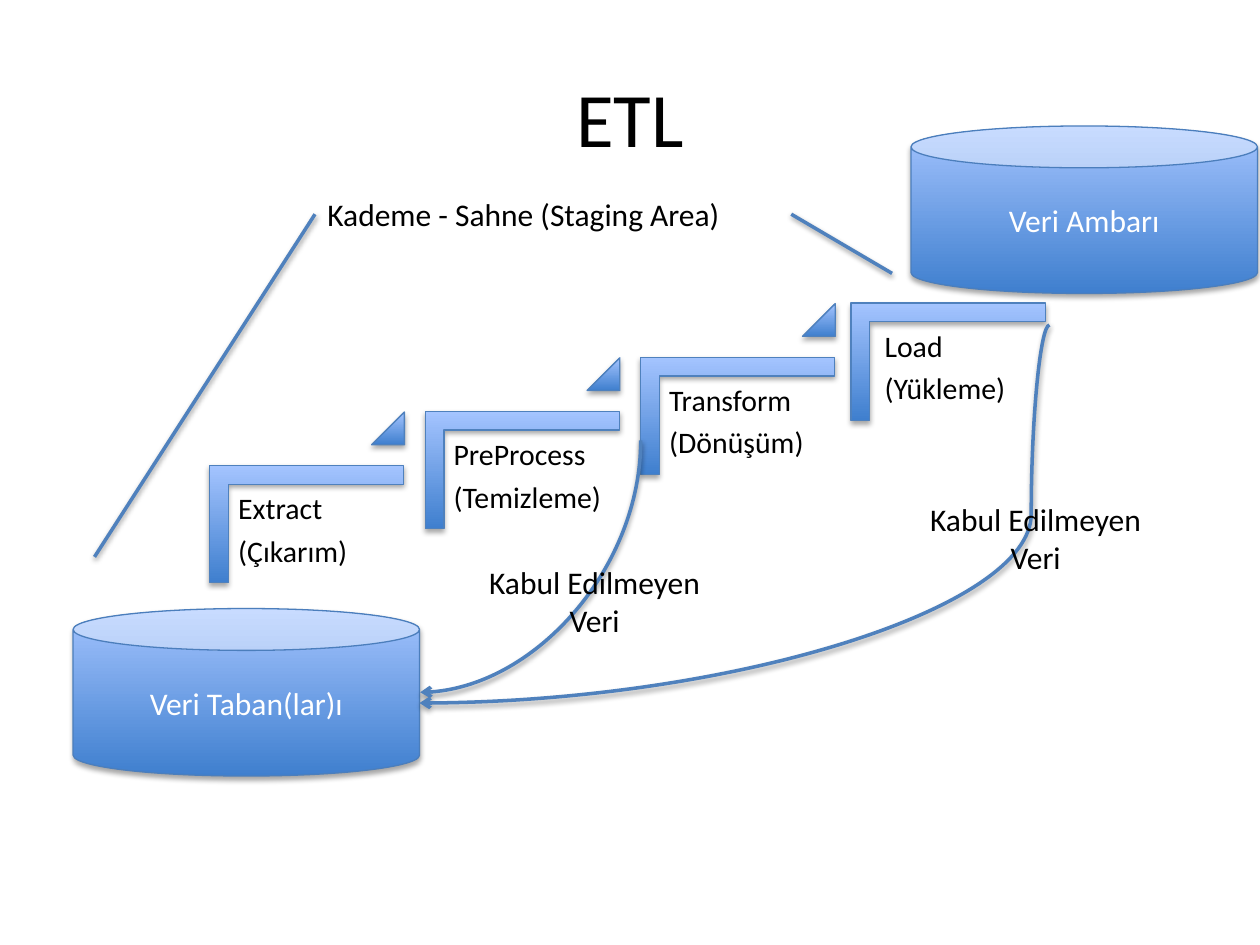
from lxml import etree
from pptx import Presentation
from pptx.dml.color import RGBColor
from pptx.enum.shapes import MSO_CONNECTOR as CONN, MSO_SHAPE as SHAPE
from pptx.enum.text import MSO_ANCHOR as ANCHOR, MSO_AUTO_SIZE as AUTO, PP_ALIGN as ALIGN
from pptx.oxml.ns import qn
from pptx.util import Inches, Pt

FONT = "Calibri"
COLORS = {"text": "000000", "light_text": "FFFFFF", "dark": "3F7FCE", "light": "A4C4FF",
          "line": "4F81BD", "can_line": "4B7EBC"}

TITLE = "ETL"
STEPS = [("Extract\n(Çıkarım)", 1.97), ("PreProcess\n(Temizleme)", 3.68),
         ("Transform\n(Dönüşüm)", 5.39), ("Load\n(Yükleme)", 7.06)]
STORES = [("Veri Taban(lar)ı", 0.58, 4.83), ("Veri Ambarı", 7.23, 1)]
REJECTS = ("Kabul Edilmeyen\nVeri", [(3.67, 4.42), (7.17, 3.92)])
STAGING = ("Kademe - Sahne (Staging Area)", 2.5, 1.5, 3.78, 0.4)
STAGING_LINES = [(0.75, 4.42, 2.5, 1.7), (7.08, 2.17, 6.28, 1.7)]
TRANSFORM_RETURN = (3.21, 3.62, 5.21, 5.37)
LOAD_RETURN = (8.33, 2.58, 3.33, 5.58)
STEP_DX, STEP_DY = 1.71, -0.43


def rgb(name):
    return RGBColor.from_string(COLORS[name])


def write(tf, text, size, color="text", align=ALIGN.LEFT):
    tf.text = text
    for p in tf.paragraphs:
        p.alignment = align
        for r in p.runs:
            r.font.name, r.font.size = FONT, Pt(size)
            r.font.color.rgb = rgb(color)


def add_shadow(s, alpha, dist):
    effects = etree.SubElement(s._element.spPr, qn("a:effectLst"))
    shadow = etree.SubElement(effects, qn("a:outerShdw"), blurRad=str(Pt(3.1)),
                              dist=str(Pt(dist)), dir="5400000", rotWithShape="0")
    color = etree.SubElement(shadow, qn("a:srgbClr"), val=COLORS["text"])
    etree.SubElement(color, qn("a:alpha"), val=str(alpha * 1000))


def add_block(shapes, kind, x, y, w, h, line="line"):
    s = shapes.add_shape(kind, Inches(x), Inches(y), Inches(w), Inches(h))
    s.fill.gradient()
    s.fill.gradient_angle = 90
    for stop, name, position in zip(s.fill.gradient_stops, ("dark", "light"), (0, 1)):
        stop.color.rgb = rgb(name)
        stop.position = position
    s._element.spPr.find(qn("a:gradFill")).set("rotWithShape", "0")
    s.line.color.rgb, s.line.width = rgb(line), Pt(0.75)
    add_shadow(s, 35, 1.8)
    return s


def add_text(shapes, text, x, y, w, h, size=18, align=ALIGN.LEFT):
    tf = shapes.add_textbox(Inches(x), Inches(y), Inches(w), Inches(h)).text_frame
    write(tf, text, size, align=align)
    tf.word_wrap = False
    tf.auto_size = AUTO.SHAPE_TO_FIT_TEXT
    return tf


def add_step(shapes, i, text, corner_x):
    dx, dy = i * STEP_DX, i * STEP_DY
    corner = add_block(shapes, SHAPE.CORNER, corner_x, 3.39 + dy, 0.93, 1.54)
    corner.rotation = 90
    corner.adjustments[0] = corner.adjustments[1] = 0.16
    tf = add_text(shapes, text, 1.82 + dx, 3.85 + dy, 1.39, 1.22, 17)
    tf.word_wrap, tf.auto_size = True, AUTO.NONE
    tf.margin_left = tf.margin_right = tf.margin_top = tf.margin_bottom = Inches(0.07)
    for p in tf.paragraphs:
        p.line_spacing, p.space_after = 0.9, Pt(6)
    if i < len(STEPS) - 1:
        triangle = add_block(shapes, SHAPE.ISOSCELES_TRIANGLE, 2.95 + dx, 3.27 + dy, 0.26, 0.26)
        triangle.adjustments[0] = 1


def add_line(shapes, ends, kind=CONN.STRAIGHT):
    s = shapes.add_connector(kind, *map(Inches, ends))
    s.line.color.rgb, s.line.width = rgb("line"), Pt(2)
    add_shadow(s, 38, 1.6)
    return s


def add_return(shapes, ends):
    sp_pr = add_line(shapes, ends, CONN.CURVE)._element.spPr
    etree.SubElement(sp_pr.find(qn("a:ln")), qn("a:tailEnd"), type="arrow")
    return sp_pr, sp_pr.find(qn("a:prstGeom"))


def main():
    """Build the ETL staging area slide."""
    prs = Presentation()
    prs.slide_width, prs.slide_height = Inches(10), Inches(7.5)
    shapes = prs.slides.add_slide(prs.slide_layouts[5]).shapes
    title = shapes.title
    title.left, title.top, title.width, title.height = map(Inches, (0.5, 0.3, 9, 1.25))
    write(title.text_frame, TITLE, 44, align=ALIGN.CENTER)
    title.text_frame.vertical_anchor = ANCHOR.MIDDLE

    for i, (text, corner_x) in enumerate(STEPS):
        add_step(shapes, i, text, corner_x)
    for text, x, y in STORES:
        can = add_block(shapes, SHAPE.CAN, x, y, 2.75, 1.33, "can_line")
        write(can.text_frame, text, 18, "light_text", ALIGN.CENTER)
        can.text_frame.vertical_anchor = ANCHOR.MIDDLE

    sp_pr, geometry = add_return(shapes, TRANSFORM_RETURN)
    geometry.set("prst", "curvedConnector2")
    sp_pr.find(qn("a:xfrm")).set("rot", "5400000")
    _, geometry = add_return(shapes, LOAD_RETURN)
    guides = geometry.find(qn("a:avLst"))
    if guides is None:
        guides = etree.SubElement(geometry, qn("a:avLst"))
    etree.SubElement(guides, qn("a:gd"), name="adj1", fmla="val 2900")

    for ends in STAGING_LINES:
        add_line(shapes, ends)
    add_text(shapes, *STAGING)
    text, places = REJECTS
    for x, y in places:
        add_text(shapes, text, x, y, 2.1, 0.71, align=ALIGN.CENTER)
    prs.save("out.pptx")


if __name__ == "__main__":
    main()
